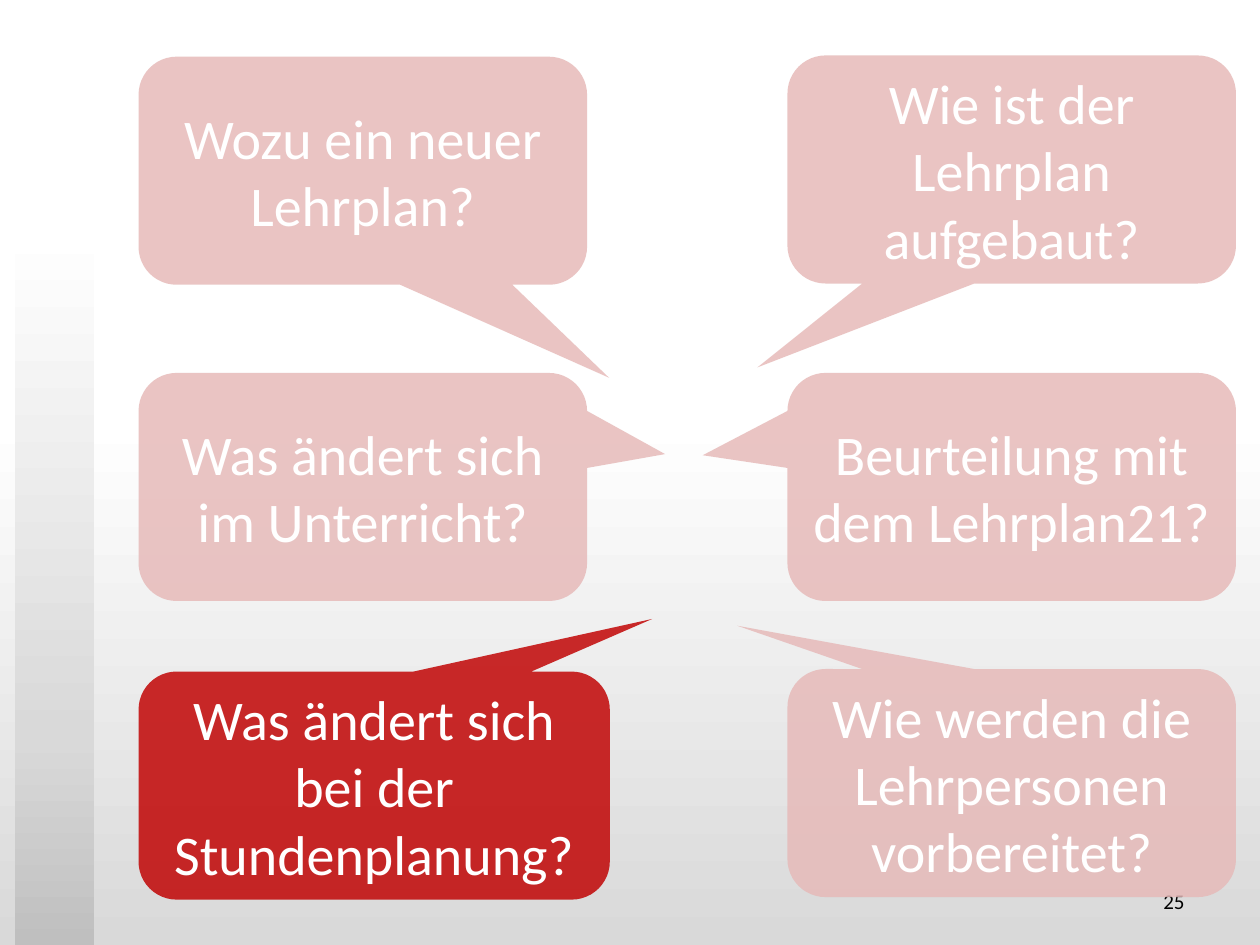
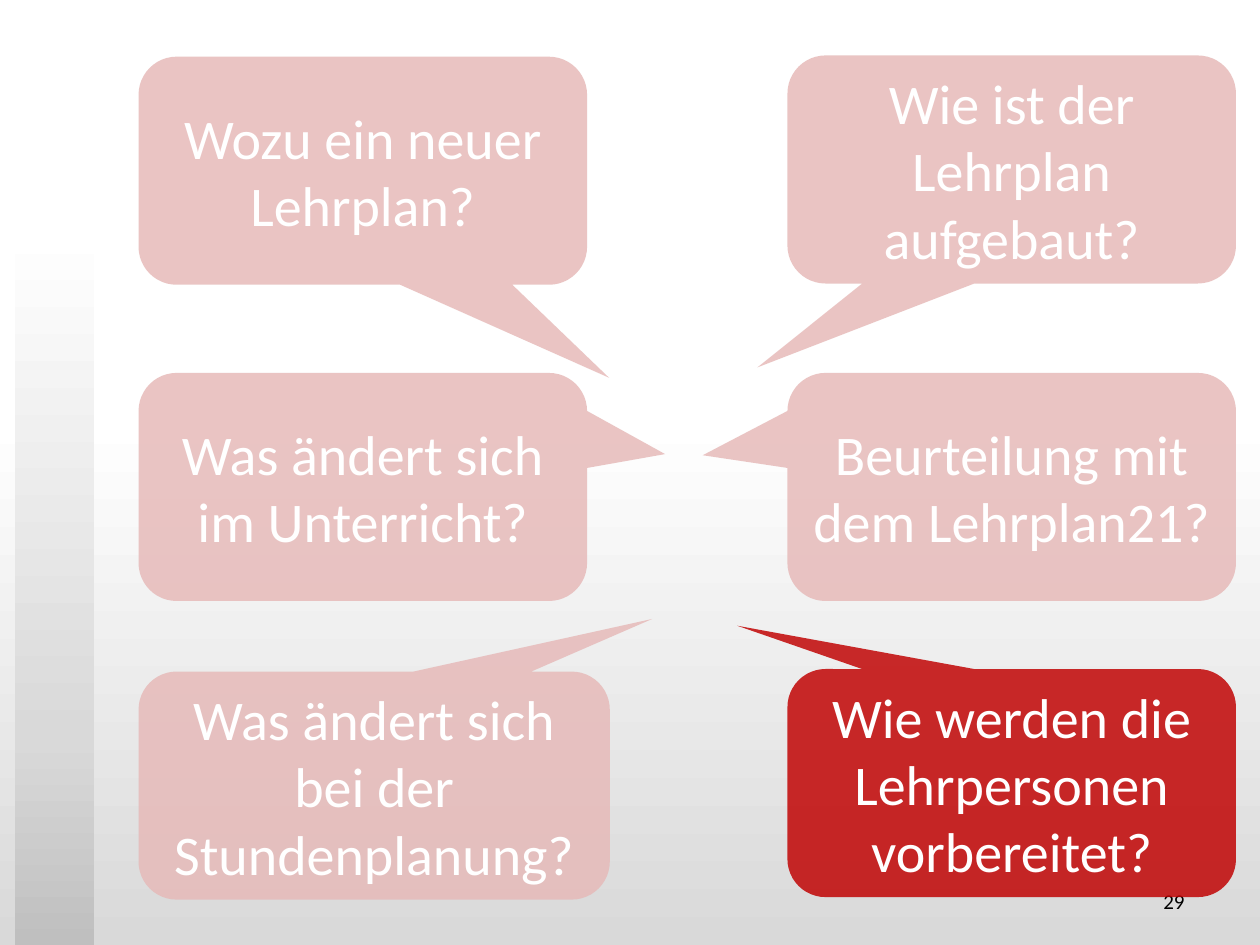
from dataclasses import dataclass

from lxml.etree import SubElement
from pptx import Presentation
from pptx.dml.color import RGBColor
from pptx.enum.shapes import MSO_SHAPE
from pptx.enum.text import MSO_ANCHOR, PP_ALIGN
from pptx.oxml.ns import qn
from pptx.util import Inches, Pt


@dataclass(frozen=True)
class Theme:
    font: str = "Calibri"
    question_size: int = 32
    number_size: int = 12
    active: str = "C00000"
    muted: str = "E6B9B8"
    question_text: str = "FFFFFF"
    number_text: str = "000000"
    callout_opacity: int = 83
    corner: float = 0.167
    background: tuple = ((0, "FFFFFF"), (44, "FFFFFF"), (100, "D9D9D9"))
    band: tuple = ((24, "FFFFFF"), (78, "D9D9D9"), (100, "BFBFBF"))


COLUMNS, ROWS = 100, 75
LEFT, RIGHT = 11, 62.5
CALLOUT_WIDTH, CALLOUT_HEIGHT = 35.6, 18.1

QUESTIONS = (
    ("Wozu ein neuer Lehrplan?", LEFT, 4.5, CALLOUT_WIDTH, (0.549, 0.908)),
    ("Wie ist der Lehrplan aufgebaut?", RIGHT, 4.4, CALLOUT_WIDTH, (-0.567, 0.868)),
    ("Was ändert sich im Unterricht?", LEFT, 29.6, CALLOUT_WIDTH, (0.674, -0.144)),
    ("Wie werden die Lehrpersonen vorbereitet?", RIGHT, 53.1, CALLOUT_WIDTH, (-0.612, -0.69)),
    ("Was ändert sich bei der Stundenplanung?", LEFT, 53.3, 37.4, (0.59, -0.731)),
    ("Beurteilung mit dem Lehrplan21?", RIGHT, 29.6, CALLOUT_WIDTH, (-0.689, -0.139)),
)

SLIDES = (
    ("25", "Was ändert sich bei der Stundenplanung?"),
    ("29", "Wie werden die Lehrpersonen vorbereitet?"),
)


class Deck:
    def __init__(self, theme):
        self.theme = theme
        self.presentation = Presentation()
        self.presentation.slide_width = Inches(10)
        self.presentation.slide_height = Inches(7.5)
        self.slide = None
        master = self.presentation.slide_master
        self.paint_gradient(master.background.fill, master.element, theme.background)

    def add_slide(self):
        blank = self.presentation.slide_layouts[6]
        self.slide = self.presentation.slides.add_slide(blank)

    def area(self, column, row, columns, rows):
        across = self.presentation.slide_width / COLUMNS
        down = self.presentation.slide_height / ROWS
        return [round(length) for length in
                (column * across, row * down, columns * across, rows * down)]

    def paint_gradient(self, fill, element, stops):
        fill.gradient()
        fill.gradient_angle = 270
        stop_list = element.find(".//" + qn("a:gsLst"))
        for stop in list(stop_list):
            stop_list.remove(stop)
        for position, color in stops:
            stop = SubElement(stop_list, qn("a:gs"), pos=str(position * 1000))
            SubElement(stop, qn("a:srgbClr"), val=color)

    def shape(self, kind, area):
        shape = self.slide.shapes.add_shape(kind, *self.area(*area))
        shape.shadow.inherit = False
        shape.line.fill.background()
        return shape

    def add_text(self, shape, text, size, color, alignment):
        frame = shape.text_frame
        frame.word_wrap = True
        frame.vertical_anchor = MSO_ANCHOR.MIDDLE
        paragraph = frame.paragraphs[0]
        paragraph.alignment = alignment
        run = paragraph.add_run()
        run.text = text
        run.font.name = self.theme.font
        run.font.size = Pt(size)
        run.font.color.rgb = RGBColor.from_string(color)

    def band(self):
        band = self.shape(MSO_SHAPE.RECTANGLE, (1.2, 0, 6.3, ROWS))
        self.paint_gradient(band.fill, band.element, self.theme.band)

    def number(self, text):
        box = self.slide.shapes.add_textbox(*self.area(71.7, 69.5, 23.3, 4))
        self.add_text(box, text, self.theme.number_size, self.theme.number_text, PP_ALIGN.RIGHT)

    def callout(self, text, column, row, width, tip, active):
        theme = self.theme
        callout = self.shape(MSO_SHAPE.ROUNDED_RECTANGULAR_CALLOUT,
                             (column, row, width, CALLOUT_HEIGHT))
        for index, value in enumerate((*tip, theme.corner)):
            callout.adjustments[index] = value
        callout.fill.solid()
        callout.fill.fore_color.rgb = RGBColor.from_string(
            theme.active if active else theme.muted)
        color = callout.element.spPr.find(qn("a:solidFill")).find(qn("a:srgbClr"))
        SubElement(color, qn("a:alpha"), val=str(theme.callout_opacity * 1000))
        self.add_text(callout, text, theme.question_size, theme.question_text, PP_ALIGN.CENTER)


def main():
    deck = Deck(Theme())
    for number, active_question in SLIDES:
        deck.add_slide()
        deck.band()
        deck.number(number)
        for question, column, row, width, tip in QUESTIONS:
            deck.callout(question, column, row, width, tip, question == active_question)
    deck.presentation.save("out.pptx")


if __name__ == "__main__":
    main()
